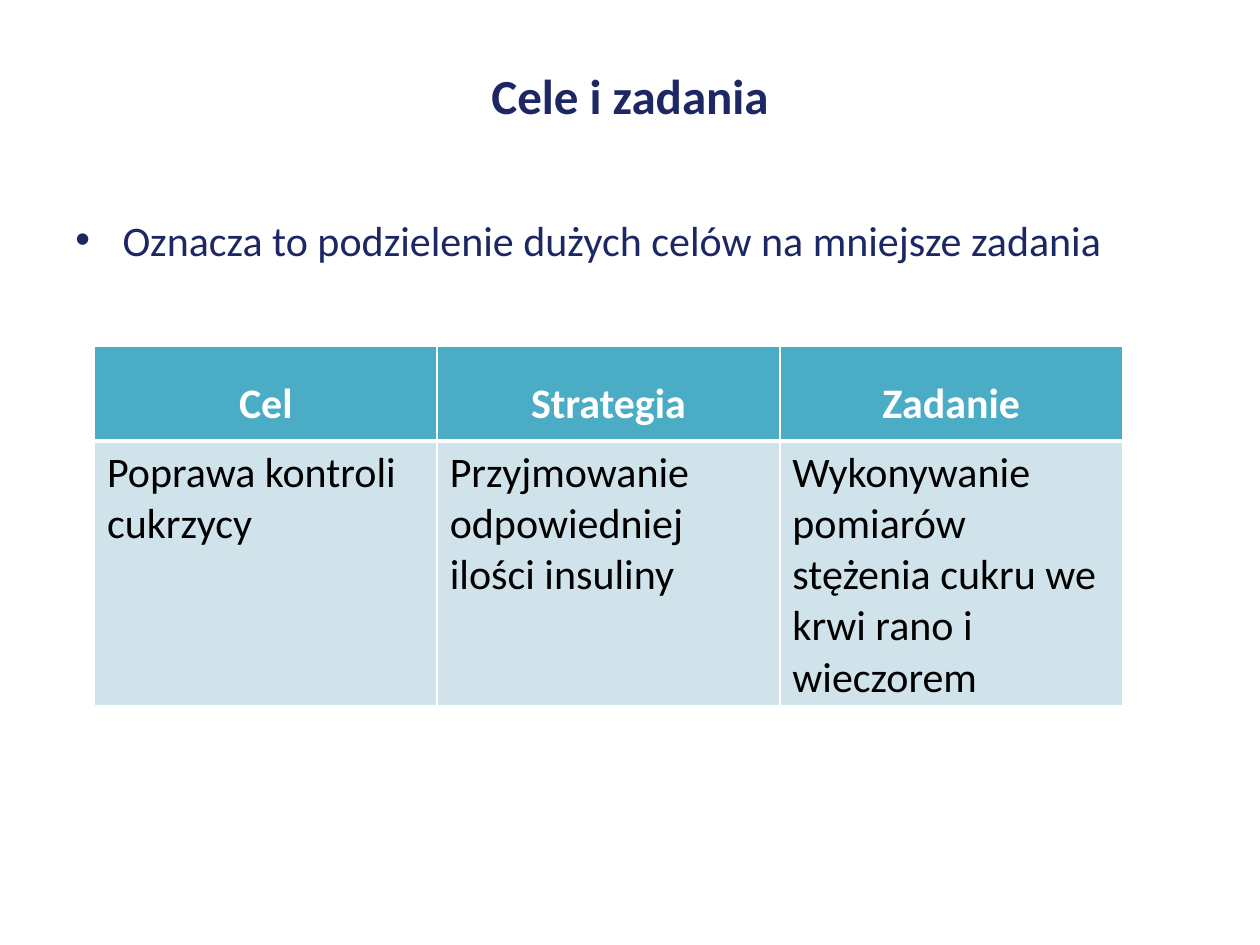
from dataclasses import dataclass
from typing import NamedTuple

from lxml.etree import SubElement as Sub
from pptx import Presentation
from pptx.dml.color import RGBColor as Rgb
from pptx.enum.text import MSO_ANCHOR as Anchor, PP_ALIGN as Align
from pptx.oxml.ns import qn
from pptx.util import Emu, Inches, Pt

WIDE, HIGH = Inches(10), Inches(7.5)


@dataclass(frozen=True)
class Theme:
    """Colours, font and type sizes of the slide."""
    font: str = "Calibri"
    navy: str = "1D2763"
    teal: str = "4BACC6"
    pale: str = "D0E3EA"
    white: str = "FFFFFF"
    black: str = "000000"
    title: int = 28
    body: int = 24
    thin: int = 1
    thick: int = 3


class Box(NamedTuple):
    """Left, top, width and height as shares of the slide."""
    left: float
    top: float
    wide: float
    high: float

    def place(self) -> list[Emu]:
        """Give the box in slide units."""
        return [Emu(round(part * side)) for part, side in zip(self, (WIDE, HIGH) * 2)]


class Band(NamedTuple):
    """A table row with its look."""
    words: tuple[str, ...]
    high: float
    fill: str
    ink: str
    bold: bool
    align: Align
    space: float
    top: int
    base: int


THEME = Theme()
TITLE = Box(0.05, 0.04, 0.9, 0.12)
POINT = Box(0.05, 0.22, 0.9, 0.63)
GRID = Box(0.08, 0.37, 0.82, 0.38)
BANDS = (
    Band(("Cel", "Strategia", "Zadanie"), 0.75, THEME.teal, THEME.white, True,
         Align.CENTER, 1.5, THEME.thin, THEME.thick),
    Band(("Poprawa kontroli cukrzycy", "Przyjmowanie odpowiedniej ilości insuliny",
          "Wykonywanie pomiarów stężenia cukru we krwi rano i wieczorem"), 2.1,
         THEME.pale, THEME.black, False, Align.LEFT, 1.0, THEME.thick, THEME.thin),
)


def style(para, size: int, ink: str, bold: bool = False) -> None:
    """Format every run of a paragraph."""
    for run in para.runs:
        run.font.name, run.font.size, run.font.bold = THEME.font, Pt(size), bold
        run.font.color.rgb = Rgb.from_string(ink)


def write(slide, box: Box, text: str, anchor: Anchor):
    """Add a wrapped text box and return its paragraph."""
    frame = slide.shapes.add_textbox(*box.place()).text_frame
    frame.word_wrap, frame.vertical_anchor = True, anchor
    frame.text = text
    return frame.paragraphs[0]


def bullet(para) -> None:
    """Give a paragraph a hanging bullet."""
    props = para._p.get_or_add_pPr()
    indent = Inches(0.375)
    props.set("marL", str(indent))
    props.set("indent", str(-indent))
    Sub(props, qn("a:buFont"), typeface="Arial")
    Sub(props, qn("a:buChar"), char="•")


def edge(cell, side: str, width: int) -> None:
    """Draw one white cell border."""
    line = Sub(cell._tc.get_or_add_tcPr(), qn(f"a:ln{side}"), w=str(Pt(width)))
    Sub(Sub(line, qn("a:solidFill")), qn("a:srgbClr"), val=THEME.white)


def fill(cell, text: str, band: Band) -> None:
    """Write and dress one table cell."""
    for side, width in zip("LRTB", (THEME.thin, THEME.thin, band.top, band.base)):
        edge(cell, side, width)
    cell.fill.solid()
    cell.fill.fore_color.rgb = Rgb.from_string(band.fill)
    cell.text_frame.text = text
    para = cell.text_frame.paragraphs[0]
    para.alignment, para.line_spacing = band.align, band.space
    style(para, THEME.body, band.ink, band.bold)


def tabulate(slide) -> None:
    """Add the table of goals, strategies and tasks."""
    left, top, wide, high = Inches(0.75), Inches(2.75), *GRID.place()[2:]
    count = len(BANDS[0].words)
    table = slide.shapes.add_table(len(BANDS), count, left, top, wide, high).table
    for col in table.columns:
        col.width = Inches(2.72)
    for row, band in zip(table.rows, BANDS):
        row.height = Inches(band.high)
        for cell, text in zip(row.cells, band.words):
            fill(cell, text, band)


def main() -> None:
    """Build and save the slide."""
    deck = Presentation()
    deck.slide_width, deck.slide_height = WIDE, HIGH
    slide = deck.slides.add_slide(deck.slide_layouts[6])
    head = write(slide, TITLE, "Cele i zadania", Anchor.MIDDLE)
    head.alignment = Align.CENTER
    style(head, THEME.title, THEME.navy, True)
    point = write(slide, POINT, "Oznacza to podzielenie dużych celów na mniejsze zadania",
                  Anchor.TOP)
    bullet(point)
    style(point, THEME.body, THEME.navy)
    tabulate(slide)
    deck.save("out.pptx")


if __name__ == "__main__":
    main()
